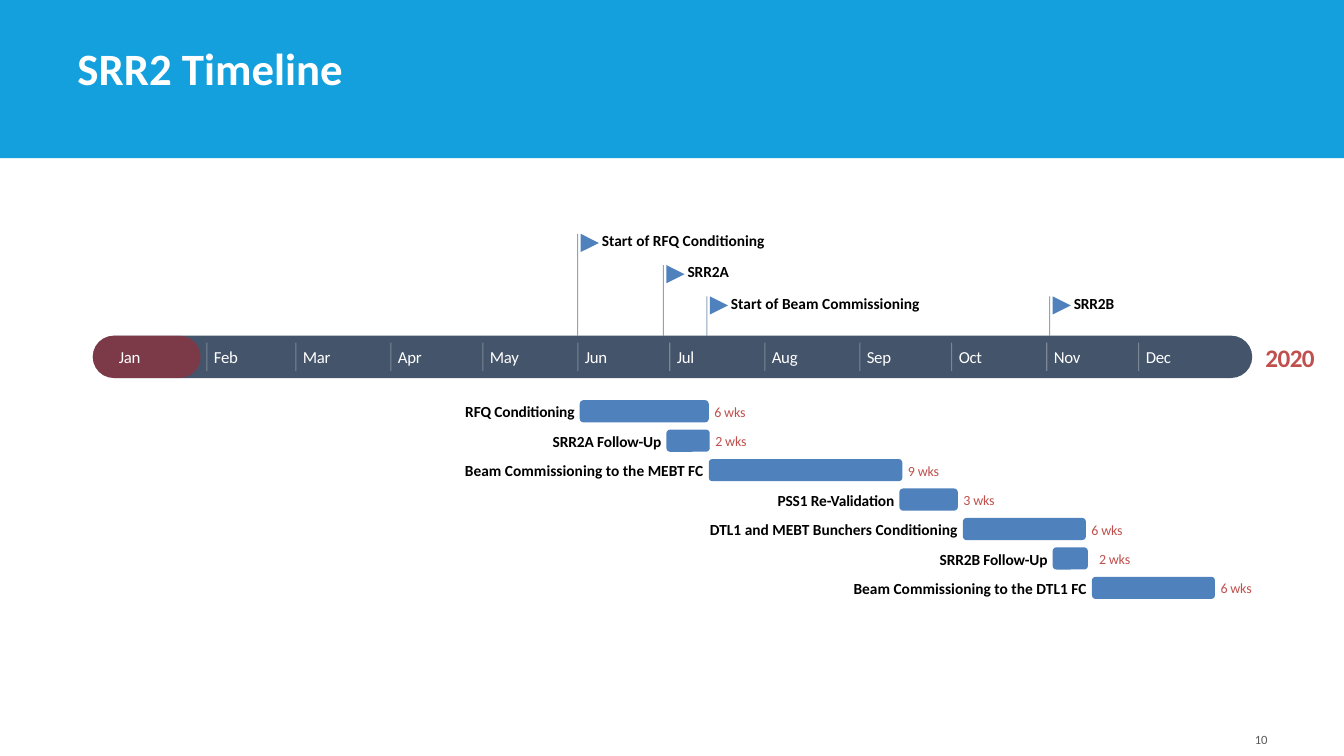
from itertools import accumulate

from lxml import etree
from pptx import Presentation
from pptx.dml.color import RGBColor
from pptx.enum.shapes import MSO_CONNECTOR as Link, MSO_SHAPE as Kind
from pptx.enum.text import MSO_ANCHOR as Anchor, PP_ALIGN as Align
from pptx.oxml.ns import qn
from pptx.util import Inches, Pt

FONT = "Calibri"
SKY = RGBColor(0x13, 0xA0, 0xDD)
SLATE = RGBColor(0x44, 0x54, 0x6A)
NAVY = RGBColor(0x1F, 0x49, 0x7E)
BLUE = RGBColor(0x4F, 0x81, 0xBD)
BRICK = RGBColor(0xC0, 0x50, 0x4D)
RED = RGBColor(0xFF, 0x00, 0x00)
GREY = RGBColor(0x59, 0x59, 0x59)
BLACK = RGBColor(0, 0, 0)
WHITE = RGBColor(0xFF, 0xFF, 0xFF)

BAND_TOP, BAND_HIGH = 3.33, 0.42
YEAR_LEFT, DAY_WIDE = 1.11, 0.0304
MONTHS = [("Jan", 31), ("Feb", 29), ("Mar", 31), ("Apr", 30),
          ("May", 31), ("Jun", 30), ("Jul", 31), ("Aug", 31),
          ("Sep", 30), ("Oct", 31), ("Nov", 30), ("Dec", 31)]

# name, staff x, row, label width, spacing
FLAGS = [("Start of RFQ Conditioning", 5.73, 0, 1.61, 0),
         ("SRR2A", 6.58, 1, 0.42, -0.1),
         ("Start of Beam Commissioning", 7.01, 2, 1.88, 0),
         ("SRR2B", 10.41, 2, 0.42, -0.1)]
FLAG_TOP, FLAG_STEP = 2.32, 0.31

TASKS = [("RFQ Conditioning", 5.75, 1.28, 1.11, -0.1, "6 wks", 0.32),
         ("SRR2A Follow-Up", 6.61, 0.43, 1.11, -0.1, "2 wks", 0.32),
         ("Beam Commissioning to the MEBT FC", 7.03, 1.92, 2.36, 0, "9 wks", 0.32),
         ("PSS1 Re-Validation", 8.92, 0.58, 1.19, -0.1, "3 wks", 0.32),
         ("DTL1 and MEBT Bunchers Conditioning", 9.55, 1.22, 2.46, 0, "6 wks", 0.32),
         ("SRR2B Follow-Up", 10.44, 0.35, 1.1, -0.1, "2 wks", 0.43),
         ("Beam Commissioning to the DTL1 FC", 10.83, 1.22, 2.32, 0, "6 wks", 0.32)]
TASK_TOP, TASK_STEP = 3.97, 0.292


def fade(holder, share):
    """Set the opacity, in percent, of a solid colour."""
    color = next(holder.iter(qn("a:srgbClr")))
    etree.SubElement(color, qn("a:alpha")).set("val", str(share * 1000))


def add_form(slide, kind, box, color, share=100, round_by=None, turn=0):
    """Add a filled shape without an outline."""
    form = slide.shapes.add_shape(kind, *map(Inches, box))
    form.shadow.inherit = False
    form.fill.solid()
    form.fill.fore_color.rgb = color
    form.line.fill.background()
    form.rotation = turn
    if round_by is not None:
        form.adjustments[0] = round_by
    if share < 100:
        fade(form.element.spPr, share)
    return form


def add_line(slide, x, top, end, color, share):
    """Add a thin, see-through upright line."""
    line = slide.shapes.add_connector(
        Link.STRAIGHT, *map(Inches, (x, top, x, end)))
    line.line.color.rgb = color
    line.line.width = Pt(0.75)
    props = line.element.spPr
    fade(props, share)
    etree.SubElement(props, qn("a:effectLst"))


def add_text(slide, text, box, size=11, color=BLACK, bold=False, space=0,
             align=Align.LEFT, anchor=Anchor.MIDDLE, pad=(0, 0), wrap=True):
    """Add a one-line text box."""
    frame = slide.shapes.add_textbox(*map(Inches, box)).text_frame
    frame.word_wrap = wrap
    frame.vertical_anchor = anchor
    frame.margin_left = frame.margin_right = Inches(pad[0])
    frame.margin_top = frame.margin_bottom = Inches(pad[1])
    para = frame.paragraphs[0]
    para.alignment = align
    run = para.add_run()
    run.text = text
    font = run.font
    font.name, font.size, font.bold = FONT, Pt(size), bold
    font.color.rgb = color
    if space:
        run._r.get_or_add_rPr().set("spc", str(round(space * 100)))


def add_band(slide):
    """Add the year band with its months."""
    add_form(slide, Kind.ROUNDED_RECTANGLE,
             (0.92, BAND_TOP, 11.5, BAND_HIGH), SLATE, round_by=0.5)
    add_form(slide, Kind.ROUNDED_RECTANGLE,
             (0.92, BAND_TOP, 1.07, BAND_HIGH), RED, share=30, round_by=0.5)
    starts = accumulate((days for _, days in MONTHS), initial=0)
    for (name, _), day in zip(MONTHS, starts):
        x = YEAR_LEFT + day * DAY_WIDE
        add_text(slide, name, (x + 0.07, 3.44, 0.3, 0.2), size=12,
                 color=WHITE, space=-0.2)
        if day:
            add_line(slide, x, 3.4, 3.68, WHITE, 30)
    add_text(slide, "2020", (12.55, 3.39, 0.49, 0.31), size=18, color=BRICK,
             bold=True, space=-0.4, align=Align.CENTER, wrap=False)


def add_flag(slide, name, x, row, wide, space):
    """Add a milestone flag above the band."""
    top = FLAG_TOP + row * FLAG_STEP
    add_line(slide, x, top, BAND_TOP, NAVY, 50)
    add_form(slide, Kind.FLOWCHART_MERGE, (x + 0.03, top, 0.18, 0.18),
             BLUE, turn=270)
    add_text(slide, name, (x + 0.24, top - 0.03, wide + 0.02, 0.19),
             bold=True, space=space)


def add_task(slide, row, name, x, wide, label, space, weeks, room):
    """Add a task bar with its name and length."""
    top = TASK_TOP + row * TASK_STEP
    add_form(slide, Kind.ROUNDED_RECTANGLE, (x, top, wide, 0.22), BLUE)
    add_text(slide, name, (x - 0.07 - label, top + 0.02, label + 0.02, 0.19),
             bold=True, space=space, align=Align.RIGHT)
    add_text(slide, weeks, (x + wide + 0.04, top + 0.03, room + 0.02, 0.17),
             size=10, color=BRICK, space=-0.1, align=Align.CENTER)


def main():
    """Build the timeline slide and save it."""
    deck = Presentation()
    deck.slide_width, deck.slide_height = Inches(13.33), Inches(7.5)
    slide = deck.slides.add_slide(deck.slide_layouts[6])
    add_form(slide, Kind.RECTANGLE, (0, 0, 13.33, 1.57), SKY)
    add_text(slide, "SRR2 Timeline", (0.67, 0.38, 10.41, 0.61), size=32,
             color=WHITE, bold=True, anchor=Anchor.BOTTOM, pad=(0.1, 0.05))
    add_text(slide, "10", (9.56, 7.06, 3.11, 0.4), size=9, color=GREY,
             align=Align.RIGHT, anchor=Anchor.BOTTOM, pad=(0.1, 0.05))
    add_band(slide)
    for flag in FLAGS:
        add_flag(slide, *flag)
    for row, task in enumerate(TASKS):
        add_task(slide, row, *task)
    deck.save("out.pptx")


if __name__ == "__main__":
    main()
